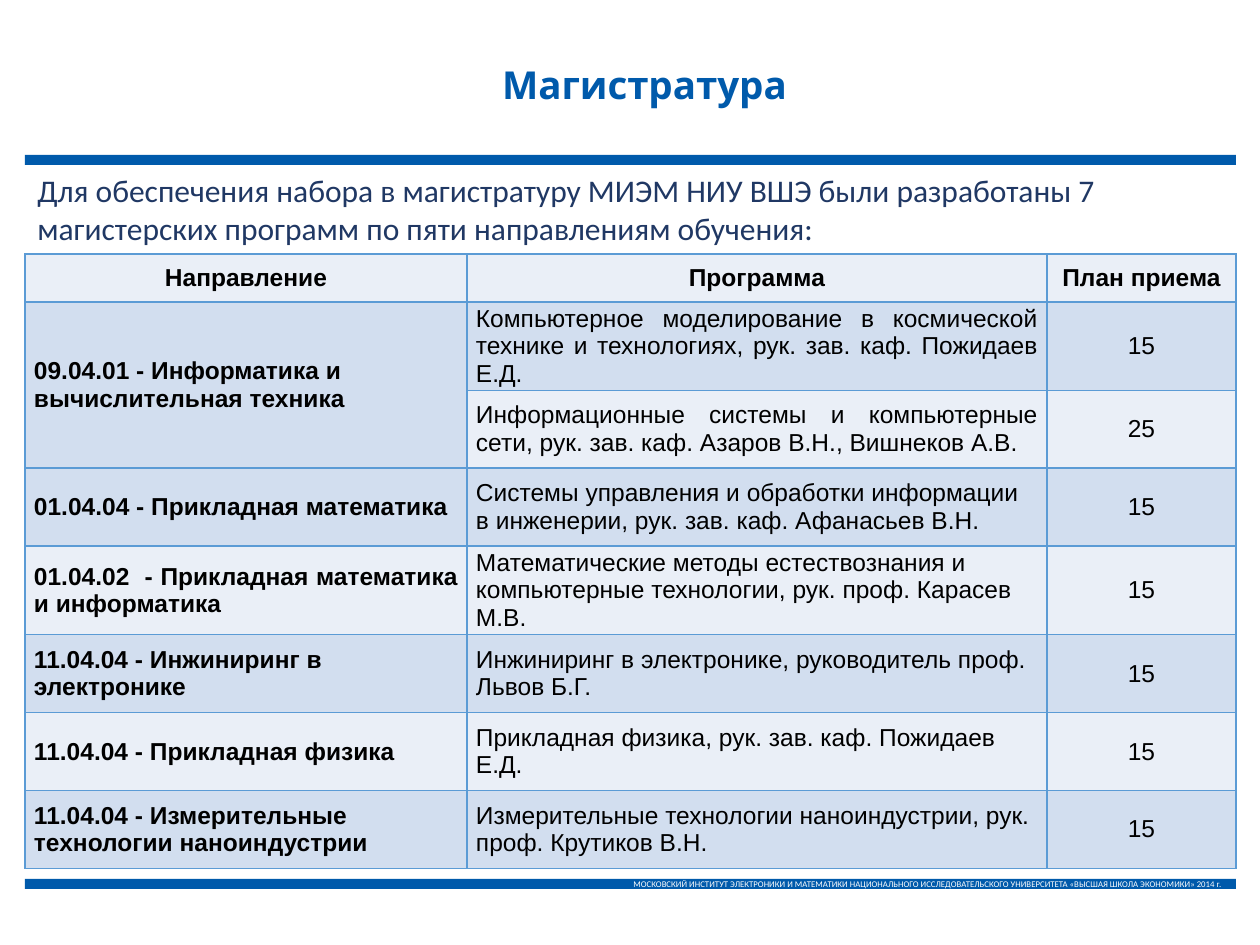
from lxml import etree
from pptx import Presentation
from pptx import util as u
from pptx.dml.color import RGBColor
from pptx.enum import shapes, text
from pptx.oxml import ns

PX = u.Inches(1) / 126
BLUE = RGBColor(0x00, 0x5A, 0xAB)
NAVY = RGBColor(0x20, 0x38, 0x64)
BORDER = RGBColor(0x5B, 0x9B, 0xD5)
LIGHT = RGBColor(0xEA, 0xEF, 0xF7)
MEDIUM = RGBColor(0xD2, 0xDE, 0xEF)
BLACK = RGBColor(0, 0, 0)
WHITE = RGBColor(0xFF, 0xFF, 0xFF)

LEFT = text.PP_ALIGN.LEFT
CENTER = text.PP_ALIGN.CENTER
RIGHT = text.PP_ALIGN.RIGHT
JUSTIFY = text.PP_ALIGN.JUSTIFY

TITLE = "Магистратура"
INTRO = ("Для обеспечения набора в магистратуру МИЭМ НИУ ВШЭ были разработаны 7 "
         "магистерских программ по пяти направлениям обучения:")
FOOTER = ("МОСКОВСКИЙ ИНСТИТУТ ЭЛЕКТРОНИКИ И МАТЕМАТИКИ НАЦИОНАЛЬНОГО ИССЛЕДОВАТЕЛЬСКОГО "
          "УНИВЕРСИТЕТА «ВЫСШАЯ ШКОЛА ЭКОНОМИКИ» 2014 г.")
HEADINGS = ("Направление", "Программа", "План приема")
# Direction, its alignment, program, its alignment, planned intake
PROGRAMS = [
    ("09.04.01 - Информатика и вычислительная техника", LEFT,
     "Компьютерное моделирование в космической технике и технологиях, "
     "рук. зав. каф. Пожидаев Е.Д.", JUSTIFY, 15),
    (None, LEFT,
     "Информационные системы и компьютерные сети, "
     "рук. зав. каф. Азаров В.Н., Вишнеков А.В.", JUSTIFY, 25),
    ("01.04.04 - Прикладная математика", JUSTIFY,
     "Системы управления и обработки информации в инженерии, "
     "рук. зав. каф. Афанасьев В.Н.", LEFT, 15),
    ("01.04.02  - Прикладная математика и информатика", JUSTIFY,
     "Математические методы естествознания и компьютерные технологии, "
     "рук. проф. Карасев М.В.", LEFT, 15),
    ("11.04.04 - Инжиниринг в электронике", LEFT,
     "Инжиниринг в электронике, руководитель проф. Львов Б.Г.", LEFT, 15),
    ("11.04.04 - Прикладная физика", LEFT,
     "Прикладная физика, рук. зав. каф. Пожидаев Е.Д.", LEFT, 15),
    ("11.04.04 - Измерительные технологии наноиндустрии", LEFT,
     "Измерительные технологии наноиндустрии, рук. проф. Крутиков В.Н.", LEFT, 15),
]
COLUMN_WIDTHS = (442, 580, 189)
HEADING_HEIGHT, ROW_HEIGHT = 48, 78
CELL_INSET = 9


def px(length):
    return u.Emu(round(length * PX))


def write(frame, words, font, size, color, align=LEFT, bold=False):
    paragraph = frame.paragraphs[0]
    paragraph.alignment = align
    run = paragraph.add_run()
    run.text = words
    run.font.name, run.font.size, run.font.bold = font, u.Pt(size), bold
    run.font.color.rgb = color


def add_bar(slide, box):
    bar = slide.shapes.add_shape(shapes.MSO_SHAPE.RECTANGLE, *map(px, box))
    bar.shadow.inherit = False
    bar.fill.solid()
    bar.fill.fore_color.rgb = BLUE
    bar.line.fill.background()
    return bar


def add_footer(slide, box):
    frame = add_bar(slide, box).text_frame
    frame.word_wrap = True
    frame.vertical_anchor = text.MSO_ANCHOR.MIDDLE
    write(frame, FOOTER, "Calibri", 5, WHITE, RIGHT)


def add_text(slide, box, *style):
    frame = slide.shapes.add_textbox(*map(px, box)).text_frame
    frame.word_wrap = True
    frame.auto_size = text.MSO_AUTO_SIZE.SHAPE_TO_FIT_TEXT
    write(frame, *style)


def set_borders(cell):
    properties = cell._tc.get_or_add_tcPr()
    for index, side in enumerate(("lnL", "lnR", "lnT", "lnB")):
        line = etree.Element(ns.qn(f"a:{side}"), w=str(u.Pt(1)))
        fill = etree.SubElement(line, ns.qn("a:solidFill"))
        etree.SubElement(fill, ns.qn("a:srgbClr"), val=str(BORDER))
        properties.insert(index, line)


def style_cell(cell, fill):
    cell.fill.solid()
    cell.fill.fore_color.rgb = fill
    cell.vertical_anchor = text.MSO_ANCHOR.MIDDLE
    cell.margin_left = cell.margin_right = px(CELL_INSET)
    cell.margin_top = cell.margin_bottom = 0
    set_borders(cell)


def add_program_table(slide, left, top):
    rows = [[(heading, CENTER, True) for heading in HEADINGS]]
    for direction, direction_align, program, program_align, intake in PROGRAMS:
        rows.append([(direction, direction_align, True),
                     (program, program_align, False),
                     (str(intake), CENTER, False)])
    heights = [HEADING_HEIGHT] + [ROW_HEIGHT] * len(PROGRAMS)
    box = (left, top, sum(COLUMN_WIDTHS), sum(heights))
    table = slide.shapes.add_table(len(rows), len(COLUMN_WIDTHS), *map(px, box)).table
    for column, width in zip(table.columns, COLUMN_WIDTHS):
        column.width = px(width)
    for row_index, (row, height) in enumerate(zip(rows, heights)):
        table.rows[row_index].height = px(height)
        for column_index, (words, align, bold) in enumerate(row):
            cell = table.cell(row_index, column_index)
            style_cell(cell, MEDIUM if row_index % 2 else LIGHT)
            if words is None:
                table.cell(row_index - 1, column_index).merge(cell)
            else:
                write(cell.text_frame, words, "Arial", 14, BLACK, align, bold)


def add_masters_slide(presentation):
    slide = presentation.slides.add_slide(presentation.slide_layouts[6])
    left, width, bar_height = 25, sum(COLUMN_WIDTHS), 10
    add_bar(slide, (left, 155, width, bar_height))
    add_footer(slide, (left, 879, width, bar_height))
    add_text(slide, (193, 55, 903, 59), TITLE, "Cabin", 22, BLUE, CENTER, True)
    add_text(slide, (left, 165, width, 89), INTRO, "Calibri", 18, NAVY)
    add_program_table(slide, left, 254)


def main():
    presentation = Presentation()
    presentation.slide_width, presentation.slide_height = px(1260), px(945)
    add_masters_slide(presentation)
    presentation.save("out.pptx")


if __name__ == "__main__":
    main()
